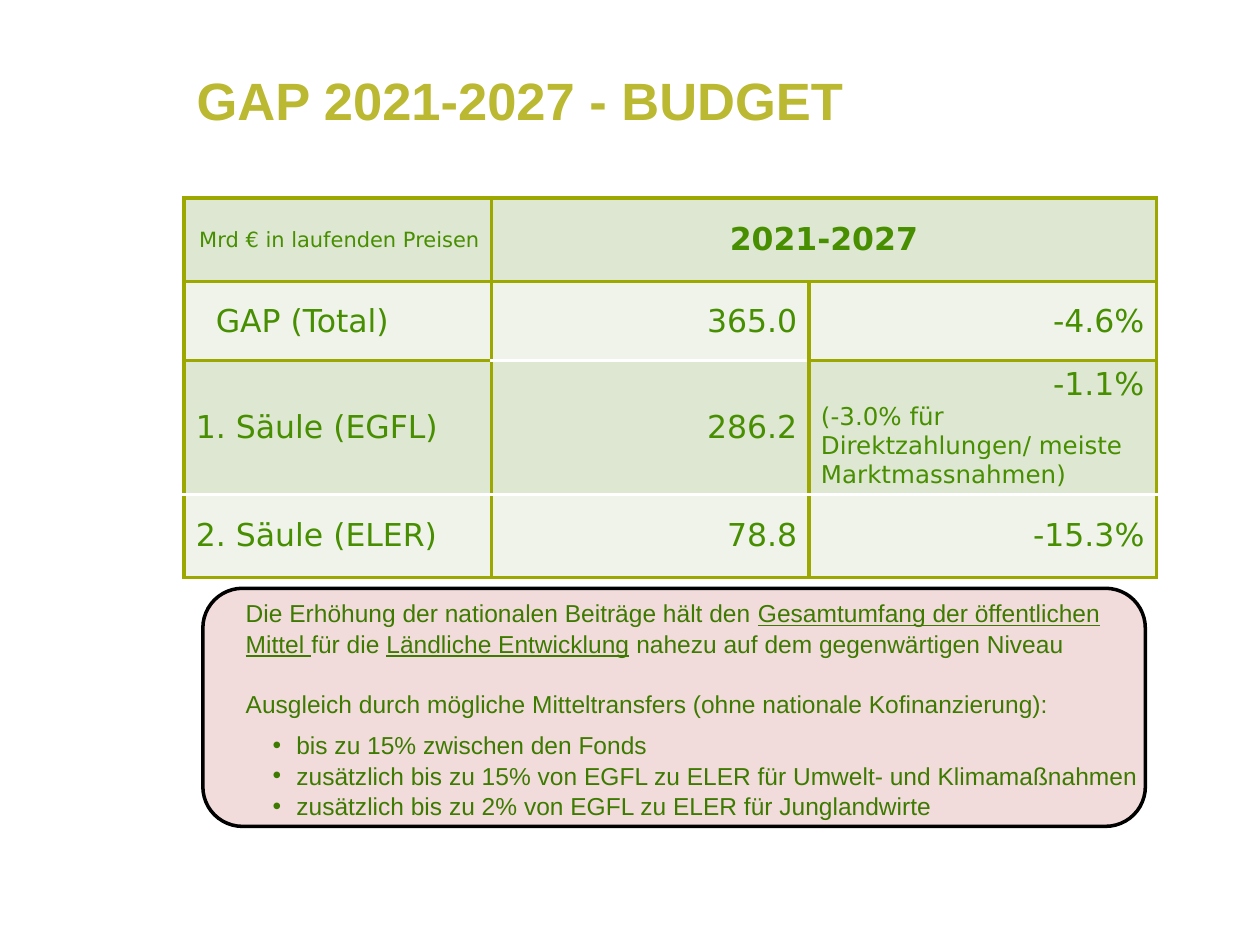
from dataclasses import dataclass
from typing import Any, NamedTuple

from lxml.etree import SubElement
from pptx import Presentation
from pptx.dml.color import RGBColor
from pptx.enum.shapes import MSO_SHAPE
from pptx.enum.text import MSO_ANCHOR, MSO_AUTO_SIZE, PP_ALIGN
from pptx.oxml import parse_xml
from pptx.oxml.ns import nsdecls, qn
from pptx.util import Cm, Pt


@dataclass(frozen=True)
class Theme:
    title_color: str = "BBB831"
    table_color: str = "478E00"
    note_color: str = "3D7A00"
    border: str = "9CA800"
    gap: str = "FFFFFF"
    band_dark: str = "DEE7D1"
    band_light: str = "EFF3EA"
    note_fill: str = "F2DCDB"
    note_line: str = "000000"
    text_font: str = "Arial"
    table_font: str = "DejaVu Sans"
    title_size: int = 30
    cell_size: int = 18
    note_size: int = 14
    unit_size: int = 12


THEME = Theme()


class Line(NamedTuple):
    text: str
    align: PP_ALIGN = PP_ALIGN.RIGHT
    size: int = THEME.cell_size
    bold: bool = False
    margin: float = 0.24


class Span(NamedTuple):
    text: str
    underline: bool = False


class Note(NamedTuple):
    spans: list[Span]
    before: float = 0
    after: float = 0
    bullet: bool = False


LEFT = PP_ALIGN.LEFT
COLUMNS = [6.2, 6.4, 7.0]
ROWS = [1.69, 1.59, 2.7, 1.67]
CELLS = [
    [[Line("Mrd € in laufenden Preisen", size=THEME.unit_size)],
     [Line("2021-2027", PP_ALIGN.CENTER, bold=True)], []],
    [[Line("GAP (Total)", LEFT, margin=0.64)], [Line("365.0")], [Line("-4.6%")]],
    [[Line("1. Säule (EGFL)", LEFT)], [Line("286.2")],
     [Line("-1.1%"),
      Line("(-3.0% für Direktzahlungen/ meiste Marktmassnahmen)", LEFT, THEME.note_size)]],
    [[Line("2. Säule (ELER)", LEFT)], [Line("78.8")], [Line("-15.3%")]],
]
GAPS = {(2, 1), (3, 0), (3, 1), (3, 2)}
NOTES = [
    Note([Span("Die Erhöhung der nationalen Beiträge hält den "),
          Span("Gesamtumfang der öffentlichen Mittel ", True),
          Span("für die "),
          Span("Ländliche Entwicklung", True),
          Span(" nahezu auf dem gegenwärtigen Niveau")]),
    Note([Span("Ausgleich durch mögliche Mitteltransfers (ohne nationale Kofinanzierung):")],
         before=17, after=6),
    Note([Span("bis zu 15% zwischen den Fonds")], bullet=True),
    Note([Span("zusätzlich bis zu 15% von EGFL zu ELER für Umwelt- und Klimamaßnahmen")],
         bullet=True),
    Note([Span("zusätzlich bis zu 2% von EGFL zu ELER für Junglandwirte")], bullet=True),
]


def assign(target: Any, **values: Any) -> None:
    for name, value in values.items():
        setattr(target, name, value)


def place(box: Any, left: float, top: float, width: float, height: float) -> None:
    assign(box, left=Cm(left), top=Cm(top), width=Cm(width), height=Cm(height))


def style_font(font: Any, name: str, size: int, color: str, **values: Any) -> None:
    assign(font, name=name, size=Pt(size), **values)
    font.color.rgb = RGBColor.from_string(color)


def paint(fill: Any, color: str) -> None:
    fill.solid()
    fill.fore_color.rgb = RGBColor.from_string(color)


def set_bullet(para: Any, bullet: bool) -> None:
    properties = para._p.get_or_add_pPr()
    properties.set("marL", str(Cm(1.02) if bullet else 0))
    properties.set("indent", str(Cm(-0.48) if bullet else 0))
    if bullet:
        SubElement(properties, qn("a:buChar")).set("char", "•")
    else:
        SubElement(properties, qn("a:buNone"))


def draw_borders(cell: Any, row: int, column: int) -> None:
    edges = {
        "lnL": THEME.border,
        "lnR": THEME.border,
        "lnT": THEME.gap if (row, column) in GAPS else THEME.border,
        "lnB": THEME.gap if (row + 1, column) in GAPS else THEME.border,
    }
    properties = cell._tc.get_or_add_tcPr()
    for position, (edge, color) in enumerate(edges.items()):
        properties.insert(position, parse_xml(
            f'<a:{edge} {nsdecls("a")} w="{Pt(2.25)}"><a:solidFill>'
            f'<a:srgbClr val="{color}"/></a:solidFill></a:{edge}>'))


def fill_cell(cell: Any, lines: list[Line], row: int, column: int) -> None:
    assign(cell, vertical_anchor=MSO_ANCHOR.MIDDLE, margin_left=Cm(lines[0].margin),
           margin_right=Cm(0.24), margin_top=Cm(0.1), margin_bottom=Cm(0.1))
    paint(cell.fill, THEME.band_light if row % 2 else THEME.band_dark)
    draw_borders(cell, row, column)
    for index, line in enumerate(lines):
        frame = cell.text_frame
        para = frame.add_paragraph() if index else frame.paragraphs[0]
        assign(para, text=line.text, alignment=line.align)
        style_font(para.runs[0].font, THEME.table_font, line.size,
                   THEME.table_color, bold=line.bold)


def draw_table(page: Any) -> None:
    table = page.shapes.add_table(len(ROWS), len(COLUMNS), Cm(3.71), Cm(3.99),
                                  Cm(sum(COLUMNS)), Cm(sum(ROWS))).table
    for column, width in zip(table.columns, COLUMNS):
        column.width = Cm(width)
    for row, height in zip(table.rows, ROWS):
        row.height = Cm(height)
    table.cell(0, 1).merge(table.cell(0, 2))
    for row, contents in enumerate(CELLS):
        for column, lines in enumerate(contents):
            if lines:
                fill_cell(table.cell(row, column), lines, row, column)


def draw_title(title: Any) -> None:
    place(title, 3.71, 1.24, 21.36, 2.59)
    assign(title.text_frame, text="GAP 2021-2027 - BUDGET", word_wrap=True,
           vertical_anchor=MSO_ANCHOR.TOP, auto_size=MSO_AUTO_SIZE.NONE)
    para = title.text_frame.paragraphs[0]
    para.alignment = LEFT
    style_font(para.runs[0].font, THEME.text_font, THEME.title_size,
               THEME.title_color, bold=True)


def draw_panel(page: Any) -> None:
    panel = page.shapes.add_shape(MSO_SHAPE.ROUNDED_RECTANGLE,
                                  Cm(4.09), Cm(11.86), Cm(19), Cm(4.8))
    panel.shadow.inherit = False
    paint(panel.fill, THEME.note_fill)
    paint(panel.line.fill, THEME.note_line)
    panel.line.width = Pt(2)


def draw_notes(body: Any) -> None:
    place(body, 4.7, 11.91, 18.8, 4.65)
    frame = body.text_frame
    assign(frame, word_wrap=True, vertical_anchor=MSO_ANCHOR.TOP,
           auto_size=MSO_AUTO_SIZE.NONE)
    for index, note in enumerate(NOTES):
        para = frame.add_paragraph() if index else frame.paragraphs[0]
        set_bullet(para, note.bullet)
        assign(para, alignment=LEFT, line_spacing=1.04,
               space_before=Pt(note.before), space_after=Pt(note.after))
        for part in note.spans:
            span = para.add_run()
            span.text = part.text
            style_font(span.font, THEME.text_font, THEME.note_size,
                       THEME.note_color, underline=part.underline)
    body._element.getparent().append(body._element)


def main() -> None:
    deck = Presentation()
    assign(deck, slide_width=Cm(25.4), slide_height=Cm(19.05))
    page = deck.slides.add_slide(deck.slide_layouts[1])
    draw_title(page.shapes.title)
    draw_table(page)
    draw_panel(page)
    draw_notes(page.placeholders[1])
    deck.save("out.pptx")


if __name__ == "__main__":
    main()
